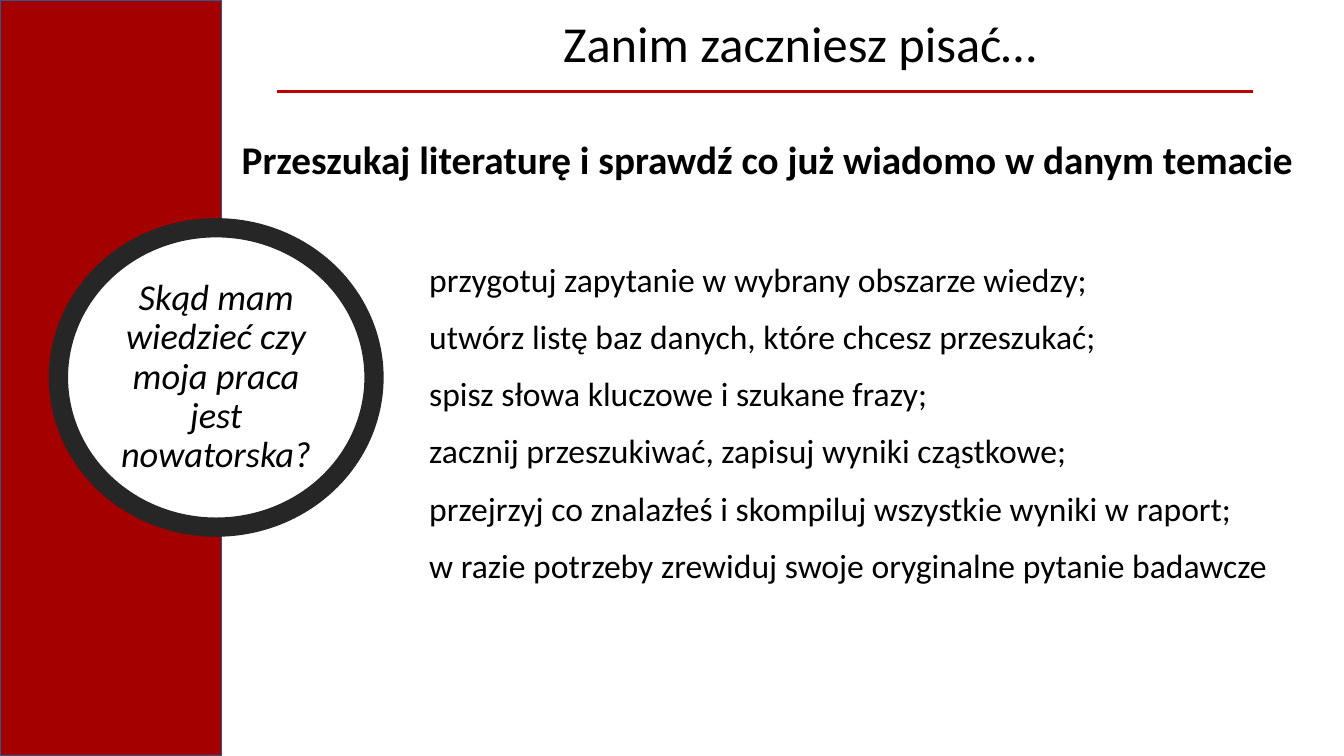
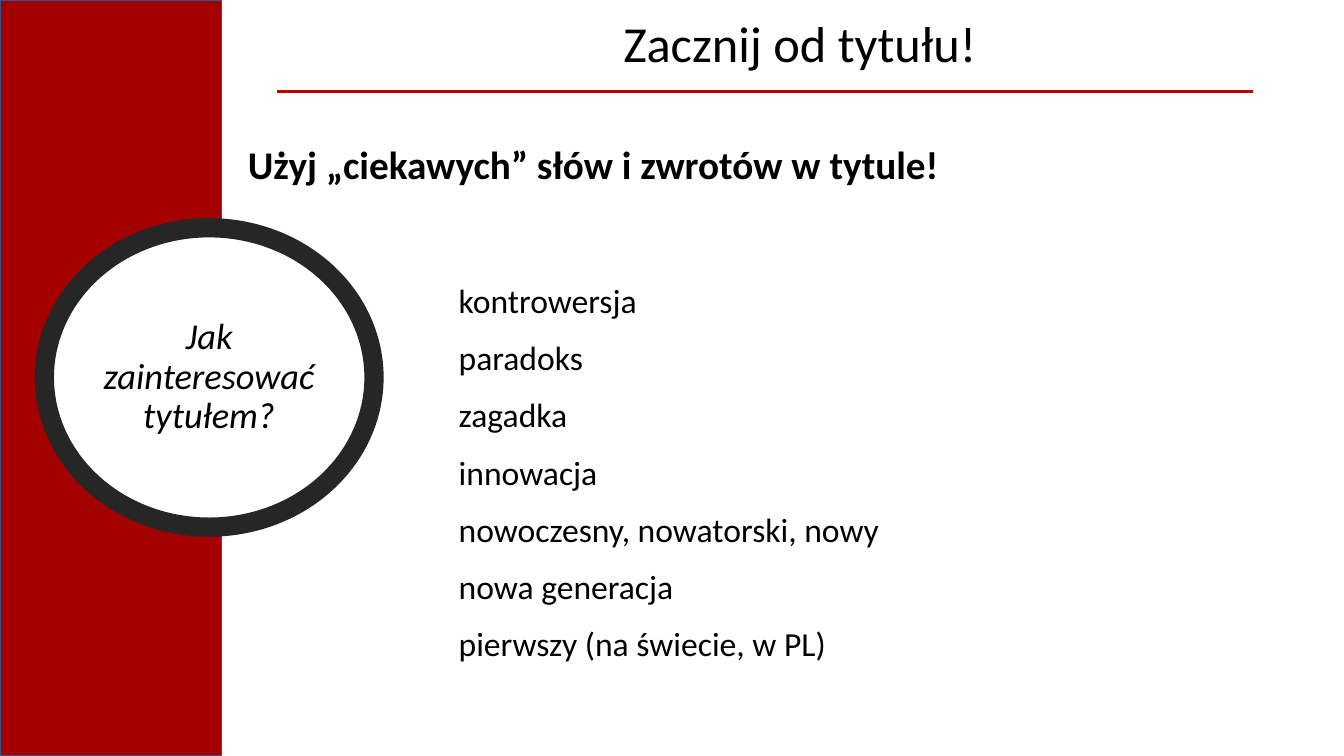
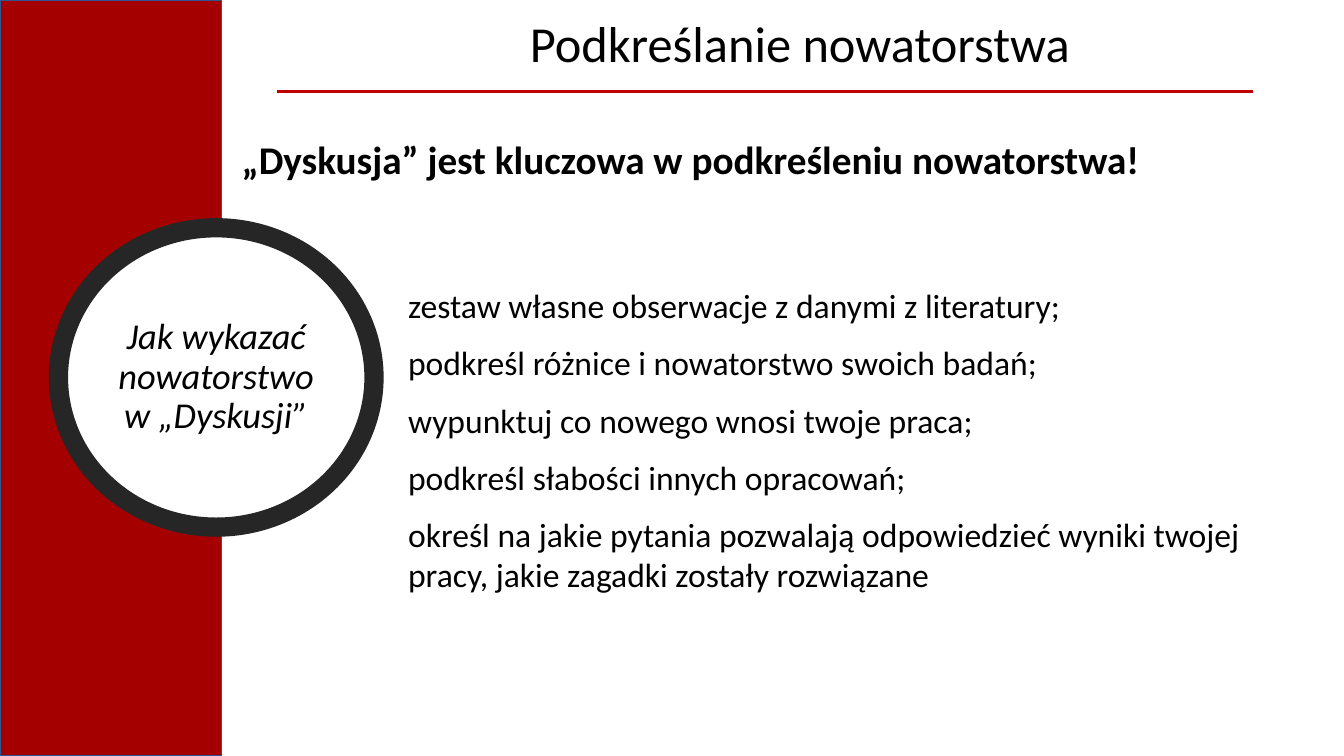
import dataclasses

import lxml.etree
import pptx
import pptx.dml.color
import pptx.enum.shapes
import pptx.enum.text
import pptx.oxml.ns
import pptx.util

SHAPES = pptx.enum.shapes.MSO_SHAPE
ALIGN = pptx.enum.text.PP_ALIGN
ANCHOR = pptx.enum.text.MSO_ANCHOR


@dataclasses.dataclass(frozen=True)
class Theme:
    font: str = "Calibri"
    ink: str = "000000"
    paper: str = "FFFFFF"
    band: str = "A40000"
    band_edge: str = "325491"
    ring: str = "262626"
    rule: str = "C00000"
    title_size: int = 36
    headline_size: int = 28
    question_size: int = 26
    list_size: int = 24
    band_edge_width: float = 1
    ring_width: float = 13.75
    rule_width: float = 2.25


class Builder:
    def __init__(self, deck, theme):
        self.deck = deck
        self.theme = theme
        self.slide = None

    def across(self, percent):
        return round(self.deck.slide_width * percent / 100)

    def down(self, percent):
        return round(self.deck.slide_height * percent / 100)

    def area(self, left, top, width, height):
        return self.across(left), self.down(top), self.across(width), self.down(height)

    def color(self, value):
        return pptx.dml.color.RGBColor.from_string(value)

    def stroke(self, line, color, width):
        line.color.rgb = self.color(color)
        line.width = pptx.util.Pt(width)

    def fill_text(self, frame, lines, size, align=ALIGN.LEFT, after=0, spacing=None,
                  bold=False, italic=False):
        frame.word_wrap = True
        for index, line in enumerate(lines):
            para = frame.add_paragraph() if index else frame.paragraphs[0]
            para.text = line
            para.alignment = align
            para.space_after = pptx.util.Pt(after)
            para.line_spacing = spacing
            para.font.name = self.theme.font
            para.font.size = pptx.util.Pt(size)
            para.font.bold = bold
            para.font.italic = italic
            para.font.color.rgb = self.color(self.theme.ink)

    def text(self, area, lines, size, **style):
        box = self.slide.shapes.add_textbox(*self.area(*area))
        self.fill_text(box.text_frame, lines, size, **style)
        return box

    def shape(self, kind, area, fill, edge, edge_width):
        shape = self.slide.shapes.add_shape(kind, *self.area(*area))
        shape.shadow.inherit = False
        shape.fill.solid()
        shape.fill.fore_color.rgb = self.color(fill)
        self.stroke(shape.line, edge, edge_width)
        return shape

    def page(self, title):
        theme = self.theme
        self.slide = self.deck.slides.add_slide(self.deck.slide_layouts[6])
        self.shape(SHAPES.RECTANGLE, (0, 0, 16.5, 100),
                   theme.band, theme.band_edge, theme.band_edge_width)
        self.rule(20.63, 93.23, 12.13)
        self.text((22.88, 0.93, 73.28, 9.47), [title], theme.title_size,
                  align=ALIGN.CENTER)

    def rule(self, start, end, height):
        line = self.slide.shapes.add_connector(
            pptx.enum.shapes.MSO_CONNECTOR.STRAIGHT,
            self.across(start), self.down(height), self.across(end), self.down(height))
        self.stroke(line.line, self.theme.rule, self.theme.rule_width)
        properties = line.element.find(pptx.oxml.ns.qn("p:spPr"))
        lxml.etree.SubElement(properties, pptx.oxml.ns.qn("a:effectLst"))

    def headline(self, text, left=17.25, top=17.2):
        self.text((left, top, 81.08, 7.6), [text], self.theme.headline_size, bold=True)

    def question(self, text, left=4.35, right=27.83):
        theme = self.theme
        ring = self.shape(SHAPES.OVAL, (left, 30.13, right - left, 39.6),
                          theme.paper, theme.ring, theme.ring_width)
        ring.text_frame.vertical_anchor = ANCHOR.MIDDLE
        self.fill_text(ring.text_frame, [text], theme.question_size,
                       align=ALIGN.CENTER, after=6, spacing=0.9, italic=True)

    def steps(self, lines, top, height, left=29.63, right=99.45, inset=0.1):
        box = self.text((left, top, right - left, height), lines,
                        self.theme.list_size, after=12)
        box.text_frame.margin_left = pptx.util.Inches(inset)


def main():
    deck = pptx.Presentation()
    deck.slide_width = pptx.util.Inches(13.33)
    deck.slide_height = pptx.util.Inches(7.5)
    builder = Builder(deck, Theme())

    builder.page("Zanim zaczniesz pisać…")
    builder.headline("Przeszukaj literaturę i sprawdź co już wiadomo w danym temacie")
    builder.question("Skąd mam wiedzieć czy moja praca jest nowatorska?")
    builder.steps([
        "przygotuj zapytanie w wybrany obszarze wiedzy;",
        "utwórz listę baz danych, które chcesz przeszukać;",
        "spisz słowa kluczowe i szukane frazy;",
        "zacznij przeszukiwać, zapisuj wyniki cząstkowe;",
        "przejrzyj co znalazłeś i skompiluj wszystkie wyniki w raport;",
        "w razie potrzeby zrewiduj swoje oryginalne pytanie badawcze",
    ], top=33.6, height=44.93, left=31.2, right=98.7)

    builder.page("Zacznij od tytułu!")
    builder.headline("Użyj „ciekawych” słów i zwrotów w tytule!", left=17.7, top=17.87)
    builder.question("Jak zainteresować tytułem?", left=3.3)
    builder.steps([
        "kontrowersja",
        "paradoks",
        "zagadka",
        "innowacja",
        "nowoczesny, nowatorski, nowy",
        "nowa generacja",
        "pierwszy (na świecie, w PL)",
    ], top=36.4, height=60.13, inset=0.6)

    builder.page("Podkreślanie nowatorstwa")
    builder.headline("„Dyskusja” jest kluczowa w podkreśleniu nowatorstwa!")
    builder.question("Jak wykazać nowatorstwo w „Dyskusji”")
    builder.steps([
        "zestaw własne obserwacje z danymi z literatury;",
        "podkreśl różnice i nowatorstwo swoich badań;",
        "wypunktuj co nowego wnosi twoje praca;",
        "podkreśl słabości innych opracowań;",
        "określ na jakie pytania pozwalają odpowiedzieć wyniki twojej pracy, "
        "jakie zagadki zostały rozwiązane",
    ], top=37.07, height=42.67)

    deck.save("out.pptx")


if __name__ == "__main__":
    main()
